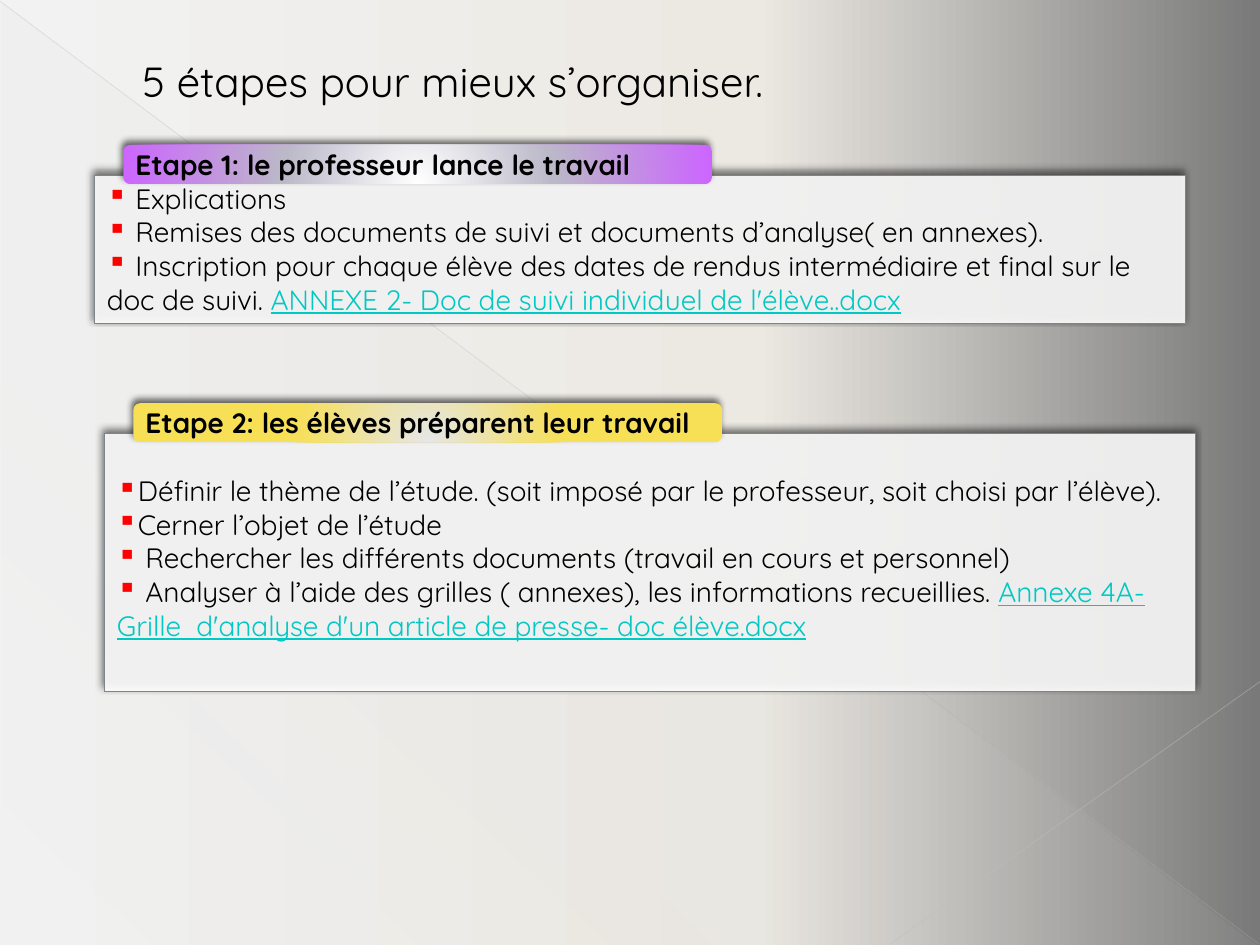
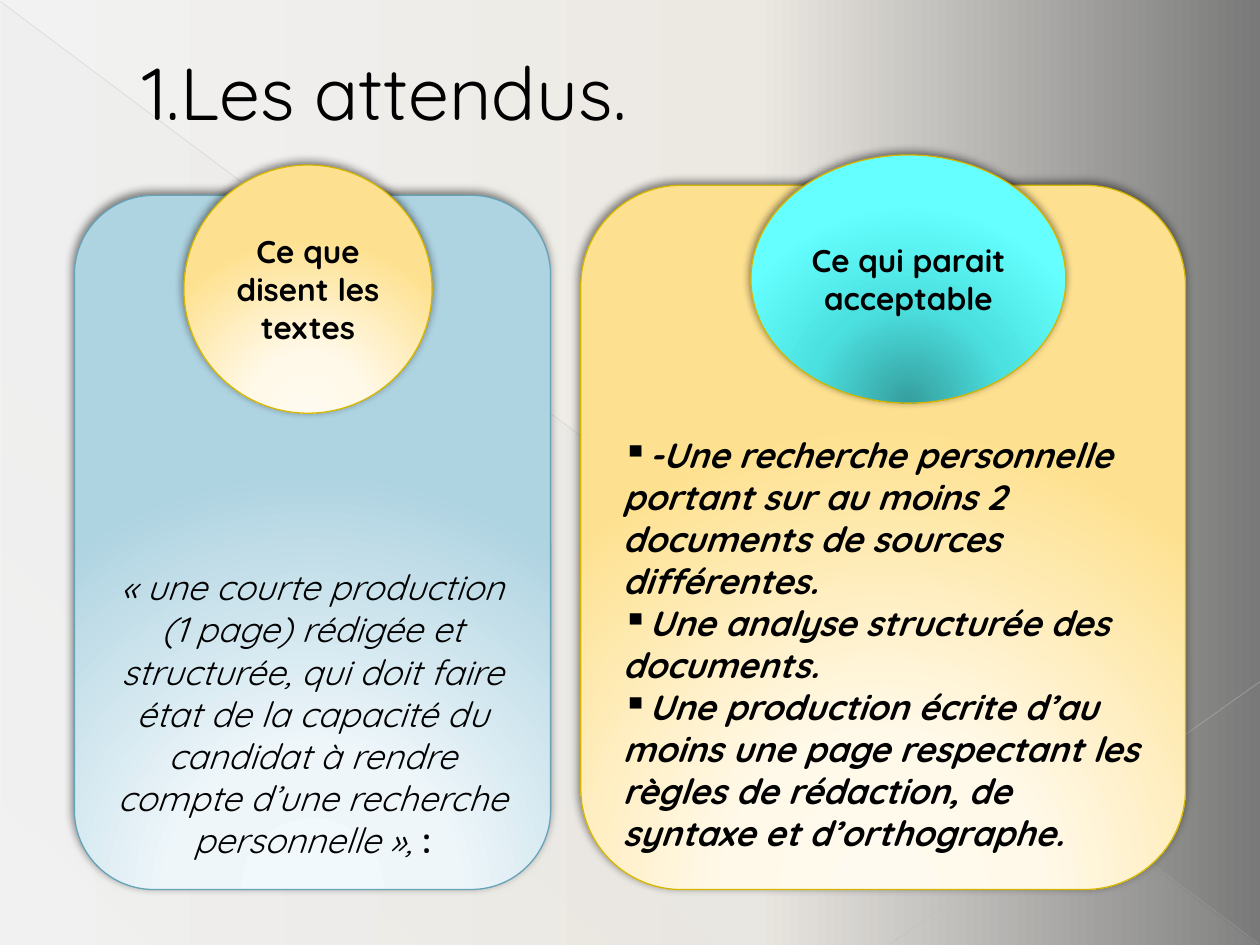
from lxml.etree import SubElement
from pptx import Presentation
from pptx.dml.color import RGBColor
from pptx.enum.shapes import MSO_CONNECTOR, MSO_SHAPE as Preset
from pptx.enum.text import MSO_ANCHOR as Anchor, PP_ALIGN as Align
from pptx.oxml.ns import qn
from pptx.util import Inches, Pt

FONT = "Quicksand"
BLACK = RGBColor(0x00, 0x00, 0x00)
WHITE = RGBColor(0xFF, 0xFF, 0xFF)
RED = RGBColor(0xFF, 0x00, 0x00)
LINK = RGBColor(0x00, 0xC8, 0xC3)
BOX_LINE = RGBColor(0x7D, 0x84, 0x8E)
BLUE_LINE = RGBColor(0x67, 0xA3, 0xB7)
GOLD_LINE = RGBColor(0xD6, 0xB6, 0x00)
VEIL = RGBColor(0xD4, 0xD2, 0xD0)
FALLING_LINE = RGBColor(0xB7, 0xB7, 0xB7)
RISING_LINE = RGBColor(0xBF, 0xBF, 0xBF)

# Gradient stops: position, colour, opacity (percent)
BACKDROP = [(0, RGBColor(0xF2, 0xF2, 0xF2), 100),
            (60, RGBColor(0xEC, 0xE9, 0xE3), 50),
            (100, RGBColor(0x79, 0x79, 0x79), 100)]
VEIL_STOPS = [(0, VEIL, 10), (70, VEIL, 8), (100, VEIL, 1)]
PURPLE = [(0, WHITE, 100), (46, RGBColor(0xBB, 0xB8, 0xC8), 100),
          (100, RGBColor(0xCC, 0x66, 0xFF), 100)]
YELLOW = [(0, RGBColor(0xE5, 0xE6, 0xE8), 100),
          (46, RGBColor(0xF7, 0xDF, 0x56), 100),
          (100, RGBColor(0xF7, 0xDF, 0x56), 100)]
BLUE = [(0, RGBColor(0xF2, 0xF9, 0xFC), 100),
        (34, RGBColor(0xEE, 0xF6, 0xFA), 100),
        (100, RGBColor(0xAE, 0xD3, 0xE1), 100)]
GOLD = [(0, RGBColor(0xFF, 0xFA, 0xEF), 100),
        (34, RGBColor(0xFF, 0xF9, 0xE9), 100),
        (100, RGBColor(0xFE, 0xE1, 0x90), 100)]
CYAN = [(0, RGBColor(0x36, 0x9E, 0x9E), 100),
        (50, RGBColor(0x4C, 0xE1, 0xE1), 100),
        (100, RGBColor(0x66, 0xFF, 0xFF), 100)]

# Shadows: opacity, blur, distance
STEP_SHADOW = (60, 4, 3)
PANEL_SHADOW = (50, 5, 2)

LINKED = {"underline": True, "color": LINK}
STEPS_TITLE = ("5 étapes pour mieux s’organiser.", 24, 0.7)
STEPS = [
    {"heading": "Etape 1: le professeur lance le travail",
     "at": (0.75, 1.39), "height": 1.18, "inset": 0.05, "stops": PURPLE,
     "tasks": [
         [(" Explications", {})],
         [(" Remises des documents de suivi et documents d’analyse( en annexes).", {})],
         [(" Inscription pour chaque élève des dates de rendus intermédiaire et "
           "final sur le doc de suivi. ", {}),
          ("ANNEXE 2- Doc de suivi individuel de l'élève..docx", LINKED)]]},
    {"heading": "Etape 2: les élèves préparent leur travail",
     "at": (0.83, 3.44), "height": 2.05, "inset": 0.32, "stops": YELLOW,
     "tasks": [
         [("Définir le thème de l’étude. (soit imposé par le professeur, "
           "soit choisi par l’élève).", {})],
         [("Cerner l’objet de l’étude", {})],
         [(" Rechercher les différents documents (travail en cours et personnel)", {})],
         [(" Analyser à l’aide des grilles ( annexes), les informations "
           "recueillies. ", {}),
          ("Annexe 4A- Grille  d'analyse d'un article de presse- doc élève.docx",
           LINKED)]]},
]

EXPECTED_TITLE = ("1.Les attendus.", 42, 0.86)
STRONG = {"bold": True, "italic": True}
PANELS = [
    {"heading": "Ce que disent les textes",
     "panel": (0.59, 1.55, 3.78, 5.51), "stops": BLUE, "line": BLUE_LINE,
     "badge": (1.46, 1.31, 1.97, 1.97), "badge_stops": GOLD,
     "align": Align.CENTER, "bullet": None,
     "body": [[("« une courte production (1 page) rédigée et structurée, qui doit "
                "faire état de la capacité du candidat à rendre compte d’une "
                "recherche personnelle », ", {"italic": True}),
               (":", {"bold": True})]]},
    {"heading": "Ce qui parait acceptable",
     "panel": (4.61, 1.47, 4.8, 5.59), "stops": GOLD, "line": GOLD_LINE,
     "badge": (5.96, 1.23, 2.5, 1.97), "badge_stops": CYAN,
     "align": Align.LEFT, "bullet": BLACK,
     "body": [[("-Une recherche personnelle portant sur au moins 2 documents de "
                "sources différentes.", STRONG)],
              [("Une analyse structurée des documents.", STRONG)],
              [("Une production écrite d’au moins une page respectant les règles "
                "de rédaction, de syntaxe et d’orthographe.", STRONG)]]},
]


def sub(parent, tag, **attributes):
    return SubElement(parent, qn(tag), {k: str(v) for k, v in attributes.items()})


def add_color(parent, color, opacity=100):
    srgb = sub(parent, "a:srgbClr", val=color)
    if opacity < 100:
        sub(srgb, "a:alpha", val=opacity * 1000)


def fade(properties, opacity):
    """Make the solid fill directly inside properties see-through."""
    sub(properties.find(qn("a:solidFill"))[0], "a:alpha", val=opacity * 1000)


def paint_gradient(fill, properties, stops, angle=None):
    """Linear at the given angle, or else circular around a point below the shape."""
    fill.gradient()
    gradient = properties.find(qn("a:gradFill"))
    for child in list(gradient):
        gradient.remove(child)
    stop_list = sub(gradient, "a:gsLst")
    for position, color, opacity in stops:
        add_color(sub(stop_list, "a:gs", pos=position * 1000), color, opacity)
    if angle is None:
        circle = sub(gradient, "a:path", path="circle")
        sub(circle, "a:fillToRect", l=50000, t=155000, r=50000, b=-55000)
    else:
        sub(gradient, "a:lin", ang=angle * 60000, scaled=0)


def add_block(slide, preset, at, stops=None, angle=None, line=None, shadow=None):
    block = slide.shapes.add_shape(preset, *map(Inches, at))
    properties = block._element.spPr
    if stops:
        paint_gradient(block.fill, properties, stops, angle)
    else:
        block.fill.solid()
        block.fill.fore_color.rgb = WHITE
        fade(properties, 90)
    if line:
        block.line.color.rgb = line
        block.line.width = Pt(0.75)
    else:
        block.line.fill.background()
    block.shadow.inherit = False
    if shadow:
        opacity, blur, distance = shadow
        outer = sub(properties.find(qn("a:effectLst")), "a:outerShdw",
                    blurRad=Pt(blur), dist=Pt(distance), dir=245 * 60000,
                    algn="tl", rotWithShape=0)
        add_color(outer, BLACK, opacity)
    return block


def write(shape, paragraphs, size, align=Align.LEFT, anchor=Anchor.MIDDLE,
          bullet=None, **margins):
    frame = shape.text_frame
    frame.word_wrap = True
    frame.vertical_anchor = anchor
    for side, inset in margins.items():
        setattr(frame, f"margin_{side}", Inches(inset))
    for index, runs in enumerate(paragraphs):
        paragraph = frame.paragraphs[0] if index == 0 else frame.add_paragraph()
        paragraph.alignment = align
        if bullet is not None:
            properties = paragraph._p.get_or_add_pPr()
            add_color(sub(properties, "a:buClr"), bullet)
            sub(properties, "a:buChar", char="▪")
        for text, style in runs:
            run = paragraph.add_run()
            run.text = text
            formats = {"name": FONT, "size": Pt(size), **style}
            run.font.color.rgb = formats.pop("color", BLACK)
            for key, value in formats.items():
                setattr(run.font, key, value)


def add_ray(slide, start, end, color, width, opacity):
    ray = slide.shapes.add_connector(MSO_CONNECTOR.STRAIGHT,
                                     *map(Inches, start + end))
    ray.line.color.rgb = color
    ray.line.width = Pt(width)
    properties = ray._element.spPr
    fade(properties.find(qn("a:ln")), opacity)
    sub(properties, "a:effectLst")


def add_themed_slide(deck, title, size, height):
    slide = deck.slides.add_slide(deck.slide_layouts[6])
    fill = slide.background.fill
    fill.solid()
    paint_gradient(fill, slide.element.find(".//" + qn("p:bgPr")), BACKDROP, 0)
    add_block(slide, Preset.RIGHT_TRIANGLE, (0.01, 0.02, 9.98, 7.48),
              VEIL_STOPS, 133)
    add_ray(slide, (0, 0.01), (9.99, 7.49), FALLING_LINE, 0.39, 35)
    add_ray(slide, (10, 5.41), (7.07, 7.49), RISING_LINE, 0.47, 45)
    heading = slide.shapes.add_textbox(*map(Inches, (0.5, 0.29, 9, height)))
    write(heading, [[(title, {})]], size, left=0.63)
    return slide


def add_step(slide, step):
    left, top = step["at"]
    box = add_block(slide, Preset.RECTANGLE, (left, top, 8.66, step["height"]),
                    line=BOX_LINE, shadow=STEP_SHADOW)
    write(box, step["tasks"], 16, anchor=Anchor.TOP, bullet=RED, top=step["inset"])
    tab = add_block(slide, Preset.ROUNDED_RECTANGLE,
                    (left + 0.23, top - 0.24, 4.67, 0.31),
                    step["stops"], shadow=STEP_SHADOW)
    write(tab, [[(step["heading"], {"bold": True})]], 16,
          left=0.08, right=0.08, top=0, bottom=0)


def add_panel(slide, part):
    panel = add_block(slide, Preset.ROUNDED_RECTANGLE, part["panel"],
                      part["stops"], line=part["line"], shadow=PANEL_SHADOW)
    write(panel, part["body"], 20, part["align"], Anchor.BOTTOM, part["bullet"])
    badge = add_block(slide, Preset.OVAL, part["badge"], part["badge_stops"],
                      line=GOLD_LINE, shadow=PANEL_SHADOW)
    write(badge, [[(part["heading"], {"bold": True})]], 18, Align.CENTER)


def main():
    deck = Presentation()
    deck.slide_width, deck.slide_height = Inches(10), Inches(7.5)
    steps_slide = add_themed_slide(deck, *STEPS_TITLE)
    for step in STEPS:
        add_step(steps_slide, step)
    expected_slide = add_themed_slide(deck, *EXPECTED_TITLE)
    for part in PANELS:
        add_panel(expected_slide, part)
    deck.save("out.pptx")


if __name__ == "__main__":
    main()
